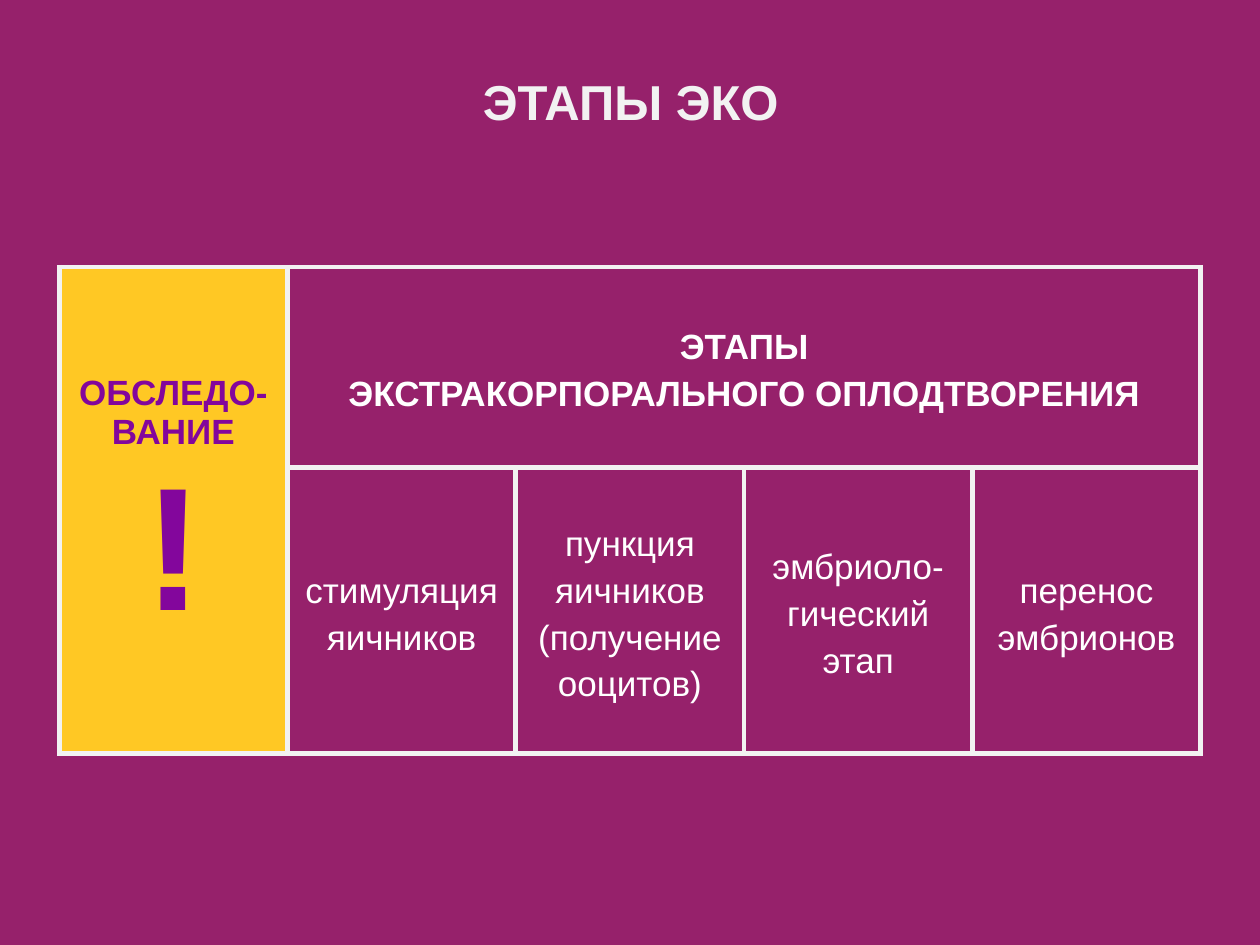
import pptx
import pptx.util
import pptx.dml.color
import pptx.enum.text
import pptx.oxml
import pptx.oxml.ns
from pptx.util import Inches

COLORS = {
    "background": "96216B",
    "light": "F2F2F2",
    "white": "FFFFFF",
    "accent": "FFC824",
    "violet": "83069C",
}
FONT = "Arial"
STAGES = [
    "стимуляция яичников",
    "пункция яичников (получение ооцитов)",
    "эмбриоло-гический этап",
    "перенос эмбрионов",
]


def rgb(name):
    return pptx.dml.color.RGBColor.from_string(COLORS[name])


def add_text(paragraph, text, *, size=20, color="white", bold=False, spacing=None):
    paragraph.alignment = pptx.enum.text.PP_ALIGN.CENTER
    if spacing:
        paragraph.line_spacing = spacing
    run = paragraph.add_run()
    run.text = text
    run.font.name = FONT
    run.font.size = pptx.util.Pt(size)
    run.font.bold = bold
    run.font.color.rgb = rgb(color)


def set_borders(cell, color="light", width=3):
    properties = cell._tc.get_or_add_tcPr()
    for position, side in enumerate(("lnL", "lnR", "lnT", "lnB")):
        properties.insert(position, pptx.oxml.parse_xml(
            f'<a:{side} {pptx.oxml.ns.nsdecls("a")} w="{pptx.util.Pt(width)}">'
            f'<a:solidFill><a:srgbClr val="{COLORS[color]}"/></a:solidFill></a:{side}>'
        ))


def place_title(slide, left, top, width, height):
    title = slide.shapes.title
    title.left, title.top, title.width, title.height = left, top, width, height
    title.text_frame.vertical_anchor = pptx.enum.text.MSO_ANCHOR.MIDDLE
    add_text(title.text_frame.paragraphs[0], "ЭТАПЫ ЭКО", size=28, color="light", bold=True)


def place_stages_table(slide, left, top, width, row_heights):
    column_count = len(STAGES) + 1
    table = slide.shapes.add_table(
        len(row_heights), column_count, left, top, width, sum(row_heights)
    ).table
    table.first_row = table.horz_banding = False
    for row, height in zip(table.rows, row_heights):
        row.height = height
    for column in table.columns:
        column.width = int(width / column_count)

    for cell in table.iter_cells():
        cell.fill.background()
        cell.vertical_anchor = pptx.enum.text.MSO_ANCHOR.MIDDLE
        set_borders(cell)

    examination, heading = table.cell(0, 0), table.cell(0, 1)
    examination.merge(table.cell(1, 0))
    heading.merge(table.cell(0, column_count - 1))

    examination.fill.solid()
    examination.fill.fore_color.rgb = rgb("accent")
    frame = examination.text_frame
    add_text(frame.paragraphs[0], "ОБСЛЕДО-ВАНИЕ", color="violet", bold=True)
    add_text(frame.add_paragraph(), "!", size=100, color="violet", bold=True)

    frame = heading.text_frame
    add_text(frame.paragraphs[0], "ЭТАПЫ", bold=True, spacing=1.2)
    add_text(frame.add_paragraph(), "ЭКСТРАКОРПОРАЛЬНОГО ОПЛОДТВОРЕНИЯ",
             bold=True, spacing=1.2)

    for column, stage in enumerate(STAGES, start=1):
        add_text(table.cell(1, column).text_frame.paragraphs[0], stage, spacing=1.2)


def main():
    presentation = pptx.Presentation()
    presentation.slide_width, presentation.slide_height = Inches(10), Inches(7.5)
    slide = presentation.slides.add_slide(presentation.slide_layouts[5])
    slide.background.fill.solid()
    slide.background.fill.fore_color.rgb = rgb("background")
    place_title(slide, Inches(0.28), Inches(0.41), Inches(9.45), Inches(0.79))
    place_stages_table(slide, Inches(0.47), Inches(2.12), Inches(9.06),
                       [Inches(1.59), Inches(2)])
    presentation.save("out.pptx")


if __name__ == "__main__":
    main()
